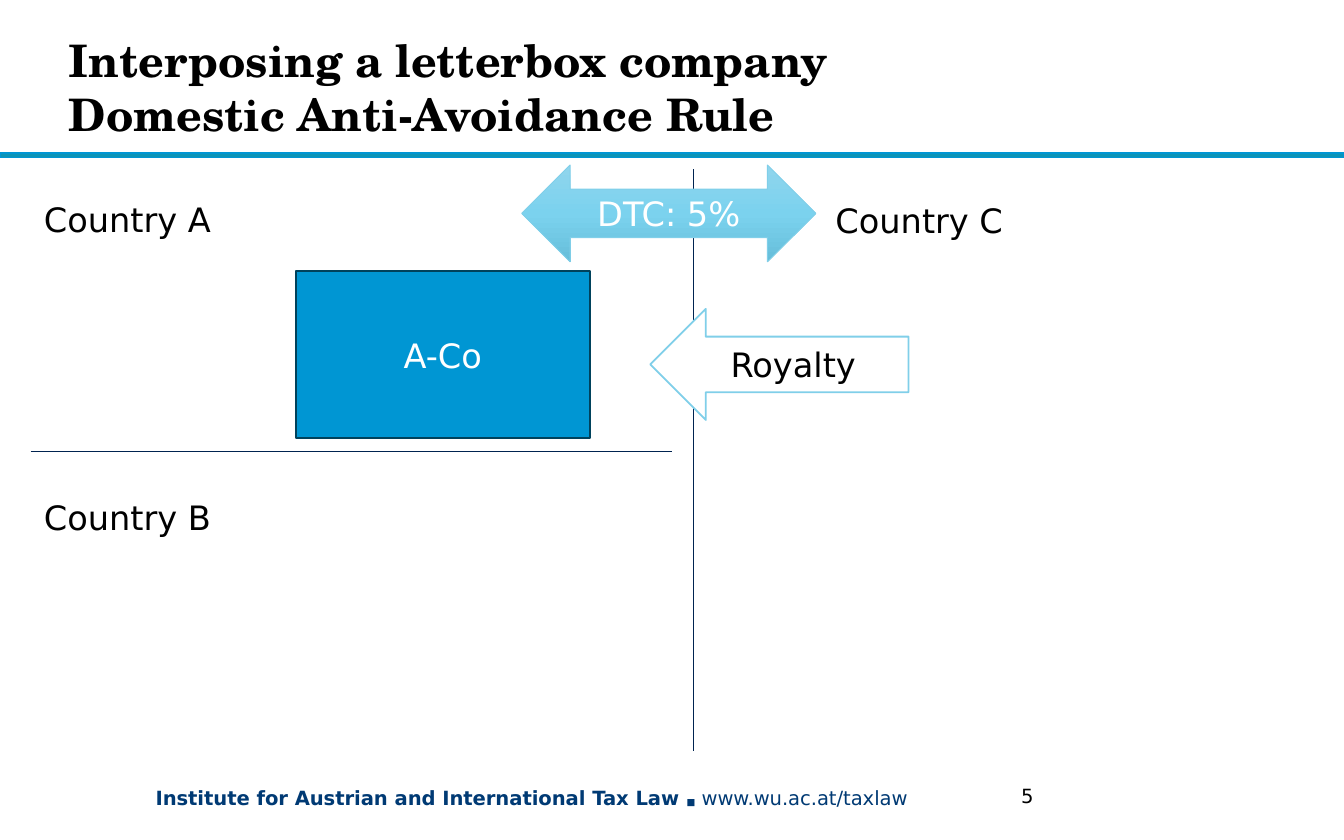
"""Build the slide on interposing a letterbox company."""
import copy

import pptx
import pptx.dml.color
import pptx.enum.shapes
import pptx.enum.text
import pptx.oxml.ns
import pptx.oxml.xmlchemy
import pptx.util

Cm = pptx.util.Cm
Pt = pptx.util.Pt
KIND = pptx.enum.shapes.MSO_SHAPE
ALIGN = pptx.enum.text.PP_ALIGN
ANCHOR = pptx.enum.text.MSO_ANCHOR
HUES = {
    "black": "000000", "white": "FFFFFF", "navy": "003A74", "rule": "002350",
    "band": "0C94B7", "blue": "0096D3", "edge": "00425C", "sky": "80CFE9",
    "light": "90D5ED", "mid": "7BD2EE", "deep": "66BEDA",
}
SANS = "DejaVu Sans"
SERIF = "TeX Gyre Schola"


def color(name):
    return pptx.dml.color.RGBColor.from_string(HUES[name])


def add_run(para, text, size, hue="black", bold=False, face=SANS):
    run = para.add_run()
    run.text = text
    font = run.font
    font.name, font.size, font.bold = face, Pt(size), bold
    font.color.rgb = color(hue)


def add_title(slide, lines):
    title = slide.shapes.title
    title.left, title.top, title.width, title.height = Cm(1.3), Cm(0.38), Cm(19), Cm(2.51)
    frame = title.text_frame
    frame.margin_left = frame.margin_right = frame.margin_top = frame.margin_bottom = 0
    frame.vertical_anchor = ANCHOR.MIDDLE
    frame.word_wrap = True
    para = frame.paragraphs[0]
    para.alignment = ALIGN.LEFT
    for i, line in enumerate(lines):
        if i:
            para.add_line_break()
        add_run(para, line, 24, bold=True, face=SERIF)


def add_label(slide, box, runs):
    frame = slide.shapes.add_textbox(*map(Cm, box)).text_frame
    frame.word_wrap = True
    for run in runs:
        add_run(frame.paragraphs[0], *run)


def add_block(slide, kind, box, fill, edge, width=1, text="", hue="white"):
    shape = slide.shapes.add_shape(kind, *map(Cm, box))
    shape.shadow.inherit = False
    if isinstance(fill, str):
        shape.fill.solid()
        shape.fill.fore_color.rgb = color(fill)
    else:
        shade(shape, fill)
    shape.line.color.rgb = color(edge)
    shape.line.width = Pt(width)
    if text:
        para = shape.text_frame.paragraphs[0]
        para.alignment = ALIGN.CENTER
        add_run(para, text, 18, hue)


def shade(shape, hues):
    fill = shape.fill
    fill.gradient()
    fill.gradient_angle = 270
    stops = shape.element.spPr.find(".//" + pptx.oxml.ns.qn("a:gsLst"))
    stops.insert(1, copy.deepcopy(stops[0]))
    for i, (stop, hue) in enumerate(zip(fill.gradient_stops, hues)):
        stop.position = i / (len(hues) - 1)
        stop.color.rgb = color(hue)


def add_rule(slide, x1, y1, x2, y2):
    kind = pptx.enum.shapes.MSO_CONNECTOR.STRAIGHT
    rule = slide.shapes.add_connector(kind, Cm(x1), Cm(y1), Cm(x2), Cm(y2))
    rule.line.color.rgb = color("rule")
    rule.line.width = Pt(0.5)
    rule.element.spPr.append(pptx.oxml.xmlchemy.OxmlElement("a:effectLst"))


def main():
    deck = pptx.Presentation()
    deck.slide_width, deck.slide_height = Cm(25.4), Cm(15.88)
    slide = deck.slides.add_slide(deck.slide_layouts[5])

    add_block(slide, KIND.RECTANGLE, (0, 2.9, 25.4, 0.08), "band", "blue")
    add_title(slide, ["Interposing a letterbox company", "Domestic Anti-Avoidance Rule"])
    add_label(slide, (2.69, 14.73, 16.03, 0.74), [
        ("Institute for Austrian and International Tax Law ", 10.5, "navy", True),
        ("■", 5, "navy"),
        (" www.wu.ac.at/taxlaw", 10.5, "navy"),
    ])
    add_label(slide, (19.05, 14.7, 1.37, 0.71), [("5", 10.5)])

    for name, x, y in (("A", 0.58, 3.63), ("B", 0.58, 9.27), ("C", 15.54, 3.66)):
        add_label(slide, (x, y, 5.56, 1.02), [(f"Country {name}", 18)])
    add_rule(slide, 13.11, 3.2, 13.11, 14.2)
    add_rule(slide, 0.58, 8.54, 12.7, 8.54)

    add_block(slide, KIND.RECTANGLE, (5.59, 5.13, 5.56, 3.15), "blue", "edge", text="A-Co")
    add_block(slide, KIND.LEFT_ARROW, (12.29, 5.84, 4.88, 2.1), "white", "sky",
              text="Royalty", hue="black")
    add_block(slide, KIND.LEFT_RIGHT_ARROW, (9.86, 3.12, 5.56, 1.83),
              ("light", "mid", "deep"), "sky", 0.5, "DTC: 5%")
    deck.save("out.pptx")


if __name__ == "__main__":
    main()
